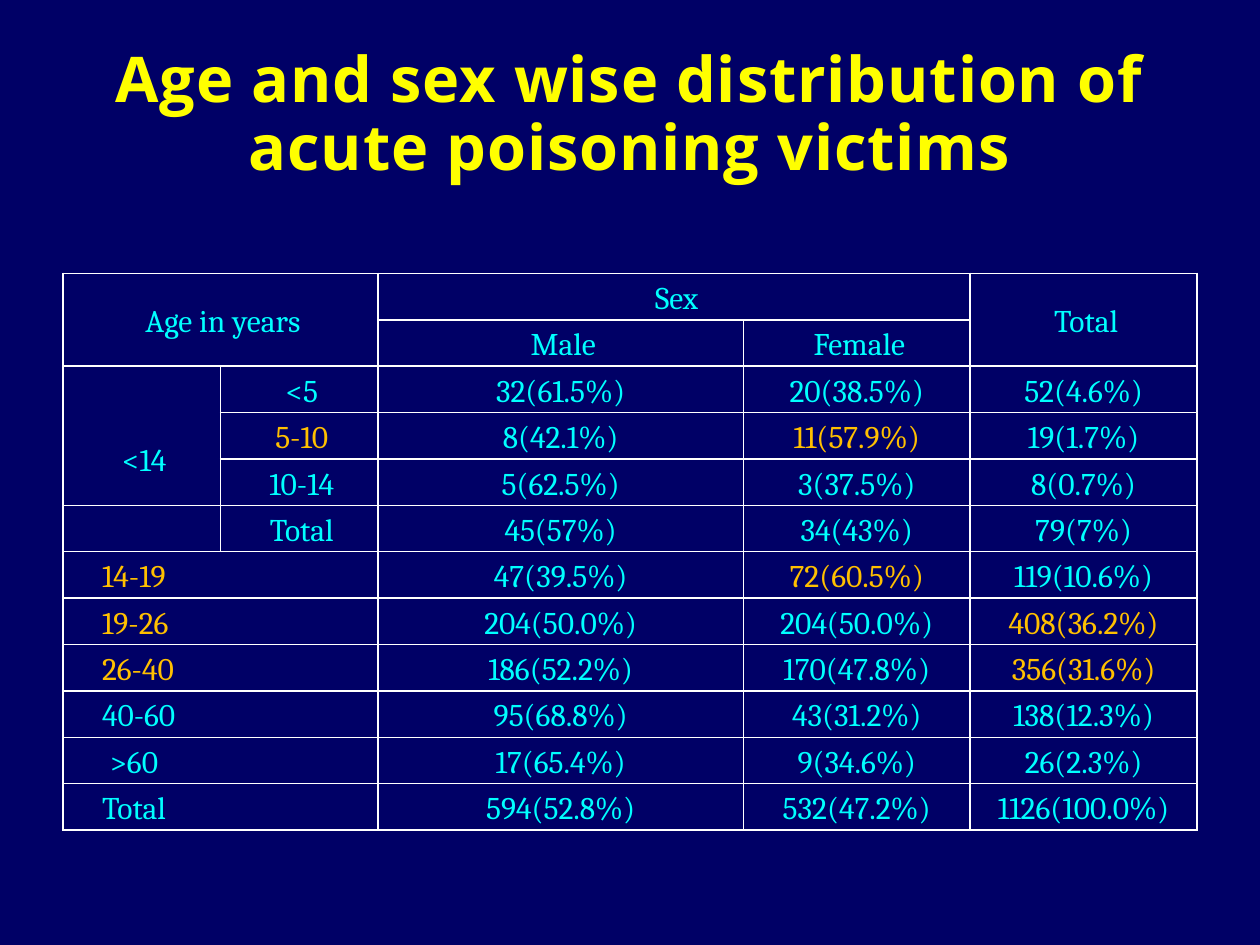
from lxml.etree import SubElement
from pptx import Presentation
from pptx.dml.color import RGBColor
from pptx.enum.text import MSO_ANCHOR, PP_ALIGN
from pptx.oxml.ns import qn
from pptx.util import Inches, Pt

COLORS = {
    "navy": "000066",
    "yellow": "FFFF00",
    "cyan": "00FFFF",
    "amber": "FFC000",
    "white": "FFFFFF",
}
TITLE_FONT = {"name": "Open Sans", "size": Pt(36), "bold": True}
CELL_FONT = {"name": "Cambria", "size": Pt(18), "bold": False}

# Table content; None is a cell covered by a merge
ROWS = [
    ["Age in years", None, "Sex", None, "Total"],
    [None, None, "Male", "Female", None],
    ["<14", "<5", "32(61.5%)", "20(38.5%)", "52(4.6%)"],
    [None, "5-10", "8(42.1%)", "11(57.9%)", "19(1.7%)"],
    [None, "10-14", "5(62.5%)", "3(37.5%)", "8(0.7%)"],
    ["", "Total", "45(57%)", "34(43%)", "79(7%)"],
    ["14-19", None, "47(39.5%)", "72(60.5%)", "119(10.6%)"],
    ["19-26", None, "204(50.0%)", "204(50.0%)", "408(36.2%)"],
    ["26-40", None, "186(52.2%)", "170(47.8%)", "356(31.6%)"],
    ["40-60", None, "95(68.8%)", "43(31.2%)", "138(12.3%)"],
    [">60", None, "17(65.4%)", "9(34.6%)", "26(2.3%)"],
    ["Total", None, "594(52.8%)", "532(47.2%)", "1126(100.0%)"],
]
HIGHLIGHTS = {"5-10", "11(57.9%)", "14-19", "72(60.5%)", "19-26",
              "408(36.2%)", "26-40", "356(31.6%)"}
COLUMN_WIDTHS = [1.25, 1.25, 2.9, 1.8, 1.8]
FIRST_WIDE_ROW = 6
MERGES = [((0, 0), (1, 1)), ((0, 2), (0, 3)), ((0, 4), (1, 4)), ((2, 0), (4, 0))]
MERGES += [((row, 0), (row, 1)) for row in range(FIRST_WIDE_ROW, len(ROWS))]


def set_attributes(target, values):
    for name, value in values.items():
        setattr(target, name, value)


def add_span(para, text, font, color):
    span = para.add_run()
    span.text = text
    set_attributes(span.font, font)
    span.font.color.rgb = RGBColor.from_string(COLORS[color])
    return span


def add_title(page, text):
    box = page.shapes.add_textbox(Inches(0.5), Inches(0.3), Inches(9), Inches(1.25))
    set_attributes(box.text_frame, {"word_wrap": True,
                                    "vertical_anchor": MSO_ANCHOR.MIDDLE})
    para = box.text_frame.paragraphs[0]
    set_attributes(para, {"alignment": PP_ALIGN.CENTER, "line_spacing": 0.9})
    span = add_span(para, text, TITLE_FONT, "yellow")
    span.font._element.set("spc", "50")  # letter spacing of half a point


def add_borders(cell):
    properties = cell._tc.get_or_add_tcPr()
    for side in ("lnL", "lnR", "lnT", "lnB"):
        line = SubElement(properties, qn(f"a:{side}"), w=str(Pt(1)))
        fill = SubElement(line, qn("a:solidFill"))
        SubElement(fill, qn("a:srgbClr"), val=COLORS["white"])


def format_cell(cell):
    set_attributes(cell, {"margin_left": 0, "margin_right": 0, "margin_top": 0,
                          "margin_bottom": 0, "vertical_anchor": MSO_ANCHOR.MIDDLE})
    add_borders(cell)
    cell.fill.background()


def fill_cell(cell, text, row, column):
    para = cell.text_frame.paragraphs[0]
    set_attributes(para, {"alignment": PP_ALIGN.CENTER, "line_spacing": 1.15})
    if column == 0 and row >= FIRST_WIDE_ROW:
        para.alignment = PP_ALIGN.LEFT
        cell.margin_left = Inches(0.37 if text == ">60" else 0.31)
    elif column < 2 or row < 2:
        cell.margin_left = Inches(0.04)
    if text == "<14":
        cell.margin_top = Inches(0.36)  # label sits below the middle
    if text:
        add_span(para, text, CELL_FONT, "amber" if text in HIGHLIGHTS else "cyan")


def add_age_table(page):
    frame = page.shapes.add_table(len(ROWS), len(COLUMN_WIDTHS), Inches(0.5),
                                  Inches(2.17), Inches(9), Inches(4.42))
    table = frame.table
    set_attributes(table, {"first_row": False, "horz_banding": False})
    for column, width in zip(table.columns, COLUMN_WIDTHS):
        column.width = Inches(width)
    for cell in table.iter_cells():
        format_cell(cell)
    for start, end in MERGES:
        table.cell(*start).merge(table.cell(*end))
    for row, texts in enumerate(ROWS):
        for column, text in enumerate(texts):
            if text is not None:
                fill_cell(table.cell(row, column), text, row, column)


def main():
    deck = Presentation()
    set_attributes(deck, {"slide_width": Inches(10), "slide_height": Inches(7.5)})
    page = deck.slides.add_slide(deck.slide_layouts[6])

    # Background
    page.background.fill.solid()
    page.background.fill.fore_color.rgb = RGBColor.from_string(COLORS["navy"])

    # Title and table
    add_title(page, "Age and sex wise distribution of acute poisoning victims")
    add_age_table(page)
    deck.save("out.pptx")


if __name__ == "__main__":
    main()
